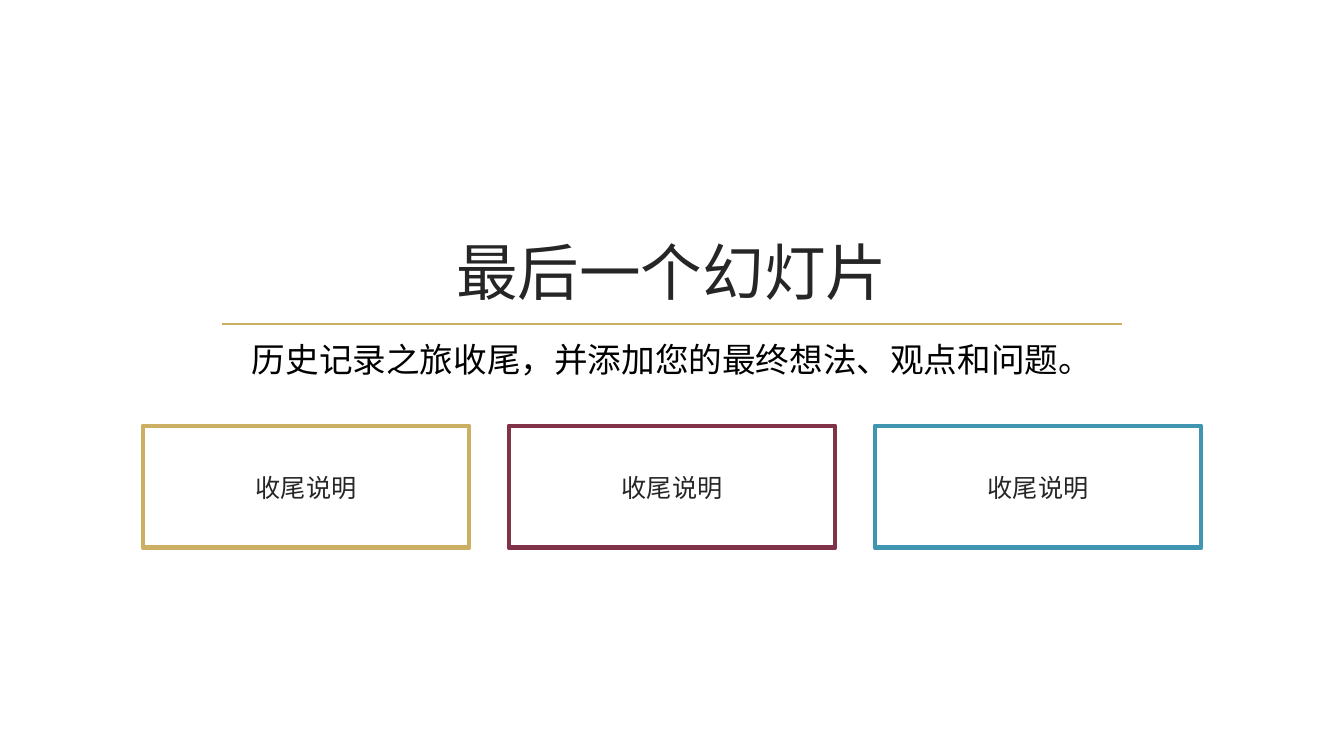
from dataclasses import dataclass

from lxml.etree import SubElement
from pptx import Presentation
from pptx.dml.color import RGBColor
from pptx.enum.shapes import MSO_CONNECTOR, MSO_SHAPE
from pptx.enum.text import MSO_ANCHOR as Anchor, MSO_AUTO_SIZE as AutoSize, PP_ALIGN as Align
from pptx.oxml.ns import qn
from pptx.util import Emu, Pt

FONT = "Noto Sans CJK SC"
GOLD, DARK, BLACK = "CBAF62", "262626", "000000"
LEFT, WIDTH = 143, 1058
CARD_TOP, CARD_WIDTH, CARD_HEIGHT = 426, 326, 122


@dataclass
class Card:
    label: str
    color: str


CARDS = [
    Card("收尾说明", GOLD),
    Card("收尾说明", "803348"),
    Card("收尾说明", "4096B0"),
]


def px(value: int) -> Emu:
    return Emu(round(value * 914400 / 100.8))


def rgb(color: str) -> RGBColor:
    return RGBColor.from_string(color)


def place(shape, left: int, top: int, width: int, height: int) -> None:
    shape.left, shape.top = px(left), px(top)
    shape.width, shape.height = px(width), px(height)


def write(shape, text: str, *, size: int, color: str, anchor: Anchor) -> None:
    frame = shape.text_frame
    frame.auto_size = AutoSize.NONE
    frame.word_wrap = True
    frame.vertical_anchor = anchor
    frame.margin_left = frame.margin_right = 0
    frame.margin_top = frame.margin_bottom = 0
    paragraph = frame.paragraphs[0]
    paragraph.alignment = Align.CENTER
    paragraph.line_spacing = 1.0
    paragraph.space_before = Pt(0)
    run = paragraph.add_run()
    run.text = text
    run.font.size = Pt(size)
    run.font.color.rgb = rgb(color)
    run.font.name = FONT
    east_asian = SubElement(run.font._element, qn("a:ea"))
    east_asian.set("typeface", FONT)


def add_rule(slide, left: int, right: int, top: int) -> None:
    rule = slide.shapes.add_connector(
        MSO_CONNECTOR.STRAIGHT, px(left), px(top), px(right), px(top))
    rule.line.color.rgb = rgb(GOLD)
    rule.line.width = Pt(1.25)
    SubElement(rule._element.spPr, qn("a:effectLst"))


def add_card(slide, card: Card, left: int) -> None:
    shape = slide.shapes.add_shape(
        MSO_SHAPE.RECTANGLE, px(left), px(CARD_TOP), px(CARD_WIDTH), px(CARD_HEIGHT))
    shape.shadow.inherit = False
    shape.fill.background()
    shape.line.color.rgb = rgb(card.color)
    shape.line.width = Pt(3.5)
    write(shape, card.label, size=18, color=DARK, anchor=Anchor.MIDDLE)


def main() -> None:
    presentation = Presentation()
    presentation.slide_width, presentation.slide_height = px(1344), px(756)
    slide = presentation.slides.add_slide(presentation.slide_layouts[5])

    add_rule(slide, 222, 1122, 324)

    title = slide.shapes.title
    place(title, LEFT, 108, WIDTH, 200)
    write(title, "最后一个幻灯片", size=44, color=DARK, anchor=Anchor.BOTTOM)

    subtitle = slide.shapes.add_textbox(px(LEFT), px(339), px(WIDTH), px(57))
    write(subtitle, "历史记录之旅收尾，并添加您的最终想法、观点和问题。",
          size=24, color=BLACK, anchor=Anchor.TOP)

    pitch = (WIDTH - CARD_WIDTH) // (len(CARDS) - 1)
    for index, card in enumerate(CARDS):
        add_card(slide, card, LEFT + index * pitch)

    presentation.save("out.pptx")


if __name__ == "__main__":
    main()
